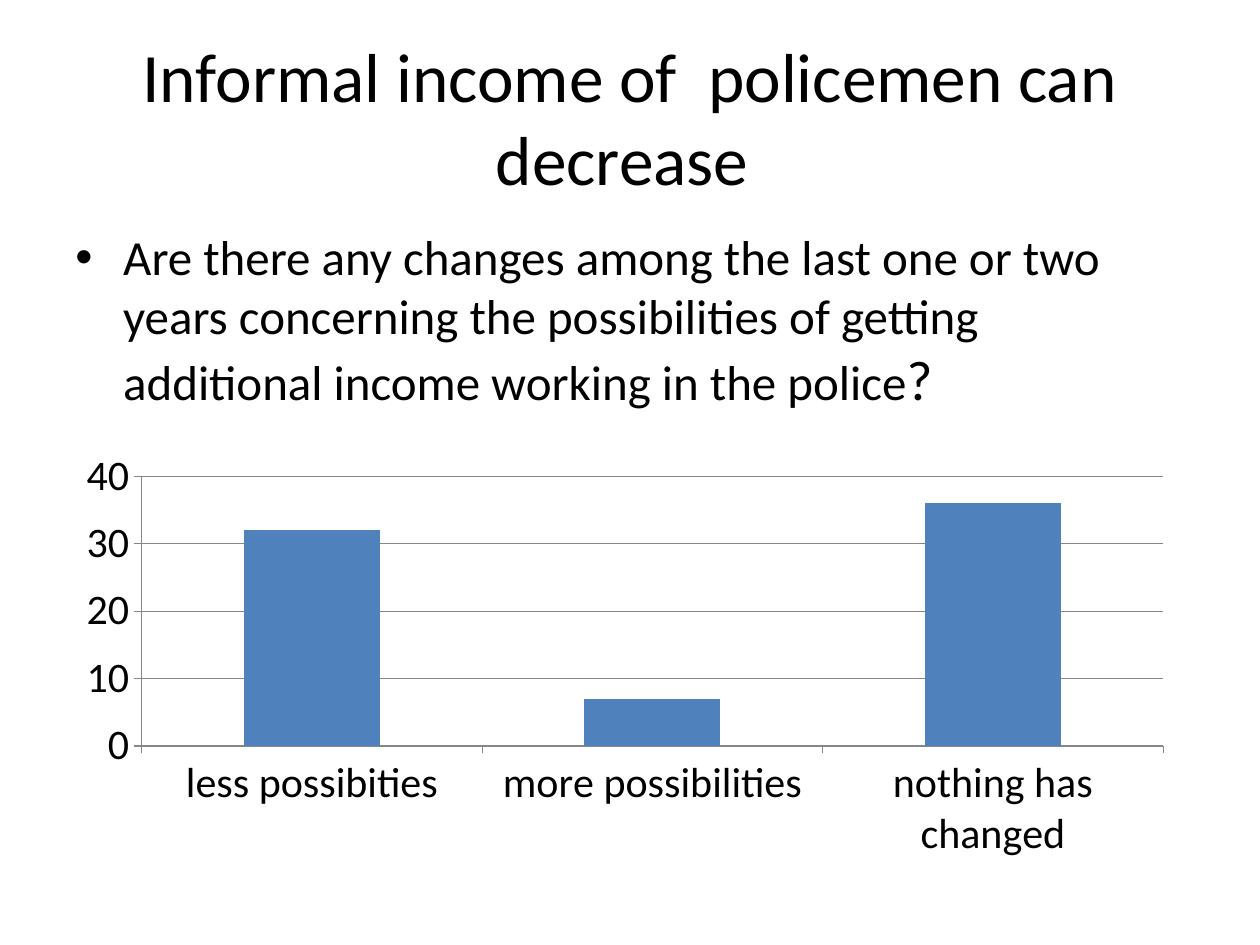
from lxml import etree
from pptx import Presentation
from pptx.chart.data import CategoryChartData
from pptx.dml.color import RGBColor
from pptx.enum import chart as ch, text as tx
from pptx.oxml.ns import qn
from pptx.util import Inches, Pt

FONT = "Calibri"
BLACK = RGBColor(0x00, 0x00, 0x00)
BLUE = RGBColor(0x4F, 0x81, 0xBD)
GRAY = RGBColor(0x87, 0x87, 0x87)

TITLE = [("Informal income of  policemen can decrease ", 39.6)]
QUESTION = [
    ("Are there any changes among the last one or two years concerning the "
     "possibilities of getting additional income working in the police", 28),
    ("?", 32),
]
ANSWERS = {"less possibities": 32, "more possibilities": 7, "nothing has changed": 36}


def add_text(slide, runs, box, align=tx.PP_ALIGN.LEFT, anchor=tx.MSO_ANCHOR.TOP,
             bullet=None, indent=0):
    """Add one paragraph made of (text, size) runs."""
    frame = slide.shapes.add_textbox(*map(Inches, box)).text_frame
    frame.word_wrap = True
    frame.vertical_anchor = anchor
    paragraph = frame.paragraphs[0]
    paragraph.alignment = align
    if bullet:
        props = paragraph._p.get_or_add_pPr()
        props.set("marL", str(Inches(indent)))
        props.set("indent", str(-Inches(indent)))
        etree.SubElement(props, qn("a:buFont"), typeface="Arial")
        etree.SubElement(props, qn("a:buChar"), char=bullet)
    for words, size in runs:
        run = paragraph.add_run()
        run.text = words
        run.font.name = FONT
        run.font.size = Pt(size)
        run.font.color.rgb = BLACK


def add_answer_chart(slide, box):
    data = CategoryChartData()
    data.categories = list(ANSWERS)
    data.add_series("Series 1", list(ANSWERS.values()))
    chart = slide.shapes.add_chart(
        ch.XL_CHART_TYPE.COLUMN_CLUSTERED, *map(Inches, box), data).chart
    chart.has_legend = False
    chart.has_title = False
    chart.font.name = FONT
    chart.font.size = Pt(24)
    chart.font.color.rgb = BLACK

    values = chart.value_axis
    values.minimum_scale, values.maximum_scale, values.major_unit = 0, 40, 10
    values.has_major_gridlines = True
    for line in (values.major_gridlines.format.line, values.format.line,
                 chart.category_axis.format.line):
        line.color.rgb = GRAY
        line.width = Pt(0.75)
    for axis in (values, chart.category_axis):
        axis.major_tick_mark = ch.XL_TICK_MARK.OUTSIDE

    plot = chart.plots[0]
    plot.gap_width = 150
    plot.vary_by_categories = False
    fill = plot.series[0].format.fill
    fill.solid()
    fill.fore_color.rgb = BLUE


def main():
    deck = Presentation()
    deck.slide_width, deck.slide_height = Inches(10), Inches(7.5)
    slide = deck.slides.add_slide(deck.slide_layouts[6])
    add_text(slide, TITLE, (0.5, 0.3, 9, 1.25),
             align=tx.PP_ALIGN.CENTER, anchor=tx.MSO_ANCHOR.MIDDLE)
    add_text(slide, QUESTION, (0.5, 1.75, 9, 4.95), bullet="•", indent=0.38)
    add_answer_chart(slide, (0.51, 3.51, 8.9, 3.39))
    deck.save("out.pptx")


if __name__ == "__main__":
    main()
